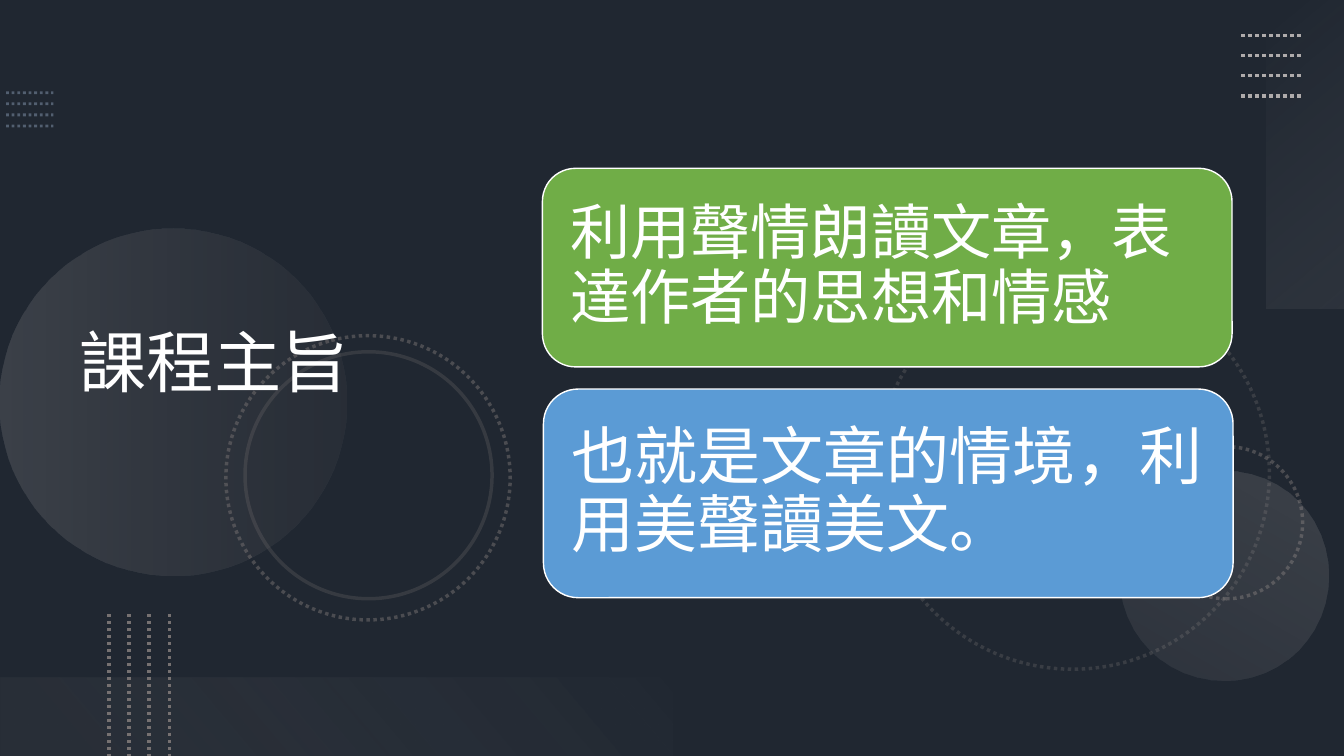
from pptx import Presentation
from pptx.dml.color import RGBColor
from pptx.enum.dml import MSO_LINE
from pptx.enum.shapes import MSO_CONNECTOR, MSO_SHAPE
from pptx.enum.text import MSO_ANCHOR, MSO_AUTO_SIZE, PP_ALIGN
from pptx.oxml.ns import qn
from pptx.util import Inches, Pt
from lxml.etree import SubElement

NAVY = RGBColor(0x44, 0x54, 0x6A)
BLACK = RGBColor(0, 0, 0)
WHITE = RGBColor(0xFF, 0xFF, 0xFF)
STEEL = RGBColor(0x84, 0x97, 0xB0)
GRAY = RGBColor(0x76, 0x71, 0x71)
SILVER = RGBColor(0xAF, 0xAB, 0xAB)
SMOKE = RGBColor(0xF5, 0xF5, 0xF5)
PEARL = RGBColor(0xF1, 0xF0, 0xF0)
GREEN = RGBColor(0x70, 0xAD, 0x47)
BLUE = RGBColor(0x5B, 0x9B, 0xD5)
FONT = "Calibri"


def fade(shape, *levels):
    tones = shape.element.spPr.iter(qn("a:srgbClr"))
    for tone, level in zip(tones, levels):
        SubElement(tone, qn("a:alpha")).set("val", str(level * 1000))


def add_shape(slide, kind, box, turn=0):
    shape = slide.shapes.add_shape(kind, *map(Inches, box))
    shape.rotation = turn
    shape.shadow.inherit = False
    shape.fill.background()
    shape.line.fill.background()
    return shape


def add_glow(slide, kind, box, turn, angle, stops):
    shape = add_shape(slide, kind, box, turn)
    shape.fill.gradient()
    shape.fill.gradient_angle = 360 - angle
    for stop, (place, color, level) in zip(shape.fill.gradient_stops, stops):
        stop.position = place
        stop.color.rgb = color
    fade(shape, *[level for place, color, level in stops])


def add_ring(slide, left, top, size, turn, level, dash=MSO_LINE.ROUND_DOT):
    ring = add_shape(slide, MSO_SHAPE.OVAL, (left, top, size, size), turn)
    ring.line.color.rgb = GRAY
    ring.line.width = Pt(2.5)
    ring.line.dash_style = dash
    fade(ring, level)


def add_dots(slide, box, color, width, level=100, upright=False):
    left, top, wide, high = box
    for step in range(4):
        if upright:
            x = left + wide * step / 3
            ends = x, top, x, top + high
        else:
            y = top + high * step / 3
            ends = left, y, left + wide, y
        line = slide.shapes.add_connector(MSO_CONNECTOR.STRAIGHT, *map(Inches, ends))
        line.line.color.rgb = color
        line.line.width = Pt(width)
        line.line.dash_style = MSO_LINE.ROUND_DOT
        fade(line, level)
        SubElement(line.element.spPr, qn("a:effectLst"))


def add_decor(slide, wide, high):
    shade = add_shape(slide, MSO_SHAPE.RECTANGLE, (0, 0, wide, high))
    shade.fill.solid()
    shade.fill.fore_color.rgb = BLACK
    fade(shade, 53)
    add_dots(slide, (0.06, 0.92, 0.47, 0.33), STEEL, 2, 50)
    add_ring(slide, 8.69, 2.74, 3.9, 75, 30)
    add_ring(slide, 11.41, 4.43, 1.51, 270, 50)
    add_glow(slide, MSO_SHAPE.OVAL, (0, 2.27, 3.44, 3.44), 270, 90,
             [(0, SILVER, 20), (1, GRAY, 10)])
    add_glow(slide, MSO_SHAPE.OVAL, (11.1, 4.67, 2.08, 2.08), 210, 90,
             [(0, SILVER, 10), (1, SILVER, 20)])
    add_ring(slide, 2.24, 3.33, 2.82, 75, 50)
    add_ring(slide, 2.43, 3.49, 2.45, 75, 25, MSO_LINE.SOLID)
    add_glow(slide, MSO_SHAPE.RECTANGLE, (11.42, 1.14, 3.06, 0.78), 270, 140,
             [(0, SMOKE, 0), (1, SILVER, 10)])
    add_dots(slide, (12.31, 0.35, 0.6, 0.6), SILVER, 2.5)
    add_glow(slide, MSO_SHAPE.RECTANGLE, (0, high - 0.78, wide / 2, 0.78), 180, 140,
             [(0.1, GRAY, 10), (1, PEARL, 0)])
    add_dots(slide, (1.08, 6.09, 0.6, high - 6.09), GRAY, 2.5, upright=True)


def set_text(shape, text, size):
    frame = shape.text_frame
    frame.text = text
    frame.word_wrap = True
    frame.auto_size = MSO_AUTO_SIZE.NONE
    frame.vertical_anchor = MSO_ANCHOR.MIDDLE
    para = frame.paragraphs[0]
    para.alignment = PP_ALIGN.LEFT
    para.line_spacing = 0.9
    font = para.runs[0].font
    font.name = FONT
    font.size = Pt(size)
    font.color.rgb = WHITE
    return frame


def add_title(slide, box, text):
    title = slide.shapes.title
    title.left, title.top, title.width, title.height = map(Inches, box)
    set_text(title, text, 48)
    tree = slide.shapes.element
    tree.remove(title.element)
    tree.append(title.element)


def add_card(slide, box, color, text, size):
    card = add_shape(slide, MSO_SHAPE.ROUNDED_RECTANGLE, box)
    card.fill.solid()
    card.fill.fore_color.rgb = color
    card.line.color.rgb = WHITE
    card.line.width = Pt(1)
    frame = set_text(card, text, size)
    frame.margin_left = frame.margin_right = Inches(0.18)
    frame.margin_top = frame.margin_bottom = Inches(0.18)
    frame.paragraphs[0].space_after = Pt(size * 0.35)


def main():
    deck = Presentation()
    wide, high = 13.33, 7.5
    deck.slide_width, deck.slide_height = Inches(wide), Inches(high)
    slide = deck.slides.add_slide(deck.slide_layouts[5])
    slide.background.fill.solid()
    slide.background.fill.fore_color.rgb = NAVY
    add_decor(slide, wide, high)
    add_title(slide, (0.69, 0.54, 4.59, 6.17), "課程主旨")
    add_card(slide, (5.38, 1.67, 6.84, 1.97), GREEN,
             "利用聲情朗讀文章，表達作者的思想和情感", 43)
    add_card(slide, (5.39, 3.86, 6.84, 2.07), BLUE,
             "也就是文章的情境，利用美聲讀美文。", 45)
    deck.save("out.pptx")


if __name__ == "__main__":
    main()
